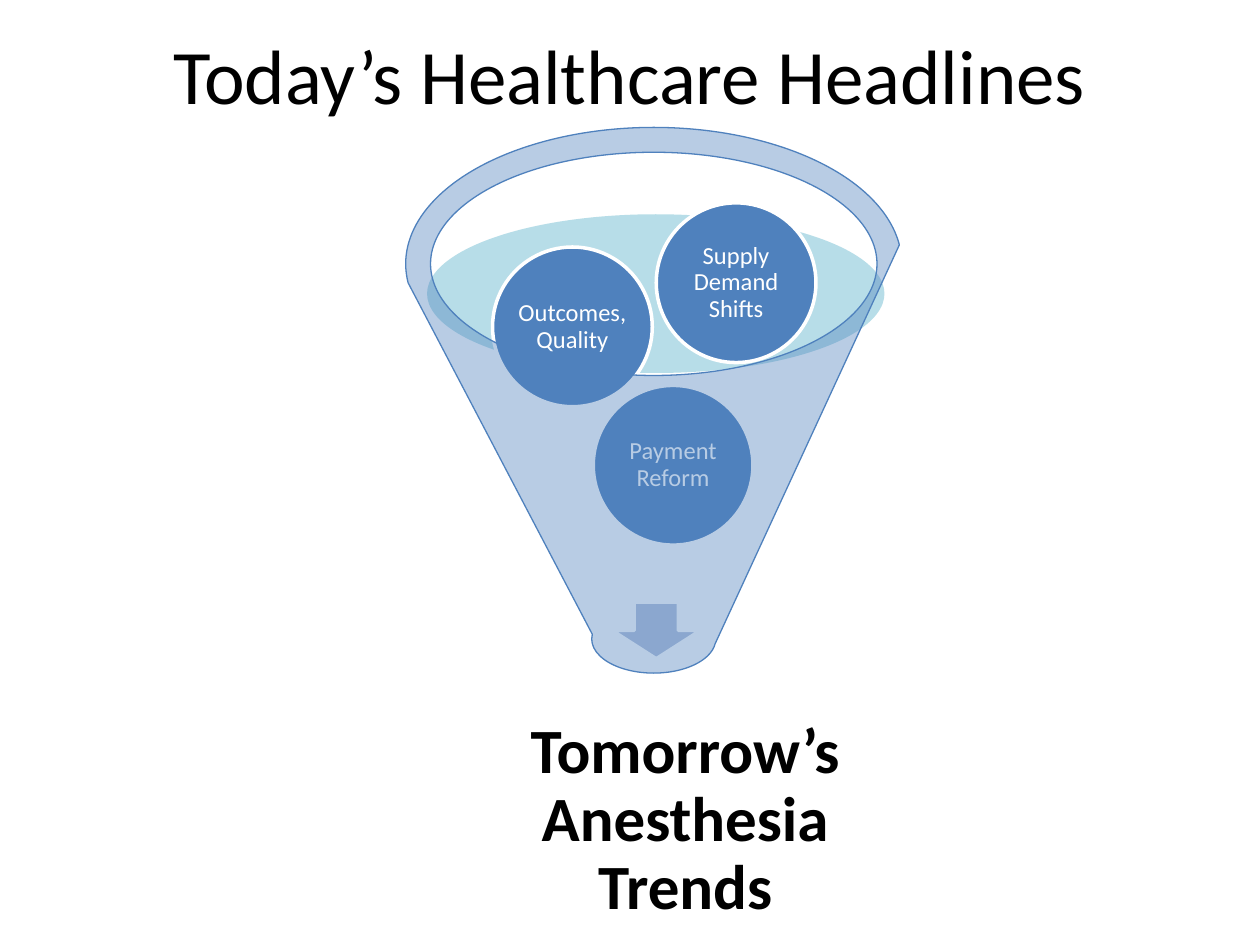
import pptx
import pptx.dml.color
import pptx.enum.shapes
import pptx.enum.text
import pptx.util
from lxml import etree
from pptx.oxml.ns import qn

Cm, Pt = pptx.util.Cm, pptx.util.Pt
Kind = pptx.enum.shapes.MSO_SHAPE

BLUE, TEAL, PALE = "4F81BD", "4BACC6", "B3C1DB"
WHITE, BLACK = "FFFFFF", "000000"


def color(code):
    return pptx.dml.color.RGBColor.from_string(code)


class Deck:
    font = "Calibri"

    def __init__(self, wide, high):
        self.prs = pptx.Presentation()
        self.prs.slide_width, self.prs.slide_height = Cm(wide), Cm(high)
        self.slide = self.prs.slides.add_slide(self.prs.slide_layouts[6])

    def put_text(self, shape, text, size, tint, bold=False, pad=0, space=1.0):
        frame = shape.text_frame
        frame.word_wrap = True
        frame.vertical_anchor = pptx.enum.text.MSO_ANCHOR.MIDDLE
        frame.margin_left = frame.margin_right = Cm(pad)
        frame.margin_top = frame.margin_bottom = Cm(0.05)
        para = frame.paragraphs[0]
        para.alignment = pptx.enum.text.PP_ALIGN.CENTER
        para.line_spacing = space
        run = para.add_run()
        run.text = text
        run.font.name, run.font.size = self.font, Pt(size)
        run.font.bold = bold
        run.font.color.rgb = color(tint)

    def label(self, box, text, size, **style):
        shape = self.slide.shapes.add_textbox(*map(Cm, box))
        self.put_text(shape, text, size, BLACK, **style)

    def form(self, kind, box, fill, line=None, width=2, alpha=None):
        """Add a preset shape; alpha is the opacity of its fill in percent."""
        shape = self.slide.shapes.add_shape(kind, *map(Cm, box))
        shape.shadow.inherit = False
        shape.fill.solid()
        shape.fill.fore_color.rgb = color(fill)
        if alpha is not None:
            tone = shape.fill._xPr.find(qn("a:solidFill"))[0]
            etree.SubElement(tone, qn("a:alpha"), val=str(alpha * 1000))
        if line:
            shape.line.color.rgb = color(line)
            shape.line.width = Pt(width)
        else:
            shape.line.fill.background()
        return shape

    def ball(self, left, top, text):
        shape = self.form(Kind.OVAL, (left, top, 3.22, 3.22), BLUE, WHITE)
        self.put_text(shape, text, 14, WHITE, pad=0.05, space=0.9)


def main():
    deck = Deck(25.4, 19.05)
    deck.label((1.9, 0, 21.6, 2.97), "Today’s Healthcare Headlines", 44, pad=0.25)
    deck.form(Kind.OVAL, (8.61, 4.32, 9.22, 3.2), TEAL, alpha=40)
    deck.form(Kind.DOWN_ARROW, (12.34, 12.14, 1.78, 1.14), PALE, WHITE)
    deck.label((9.52, 14.27, 8.59, 4.58), "Tomorrow’s Anesthesia Trends", 36,
               bold=True, pad=0.64, space=0.9)
    for left, top, text in (
        (11.96, 7.77, "Payment Reform"),
        (9.93, 4.98, "Outcomes, Quality"),
        (13.23, 4.09, "Supply Demand Shifts"),
    ):
        deck.ball(left, top, text)
    deck.form(Kind.FUNNEL, (8.18, 2.57, 10, 11), BLUE, BLUE, 0.75, alpha=40)
    deck.prs.save("out.pptx")


if __name__ == "__main__":
    main()
